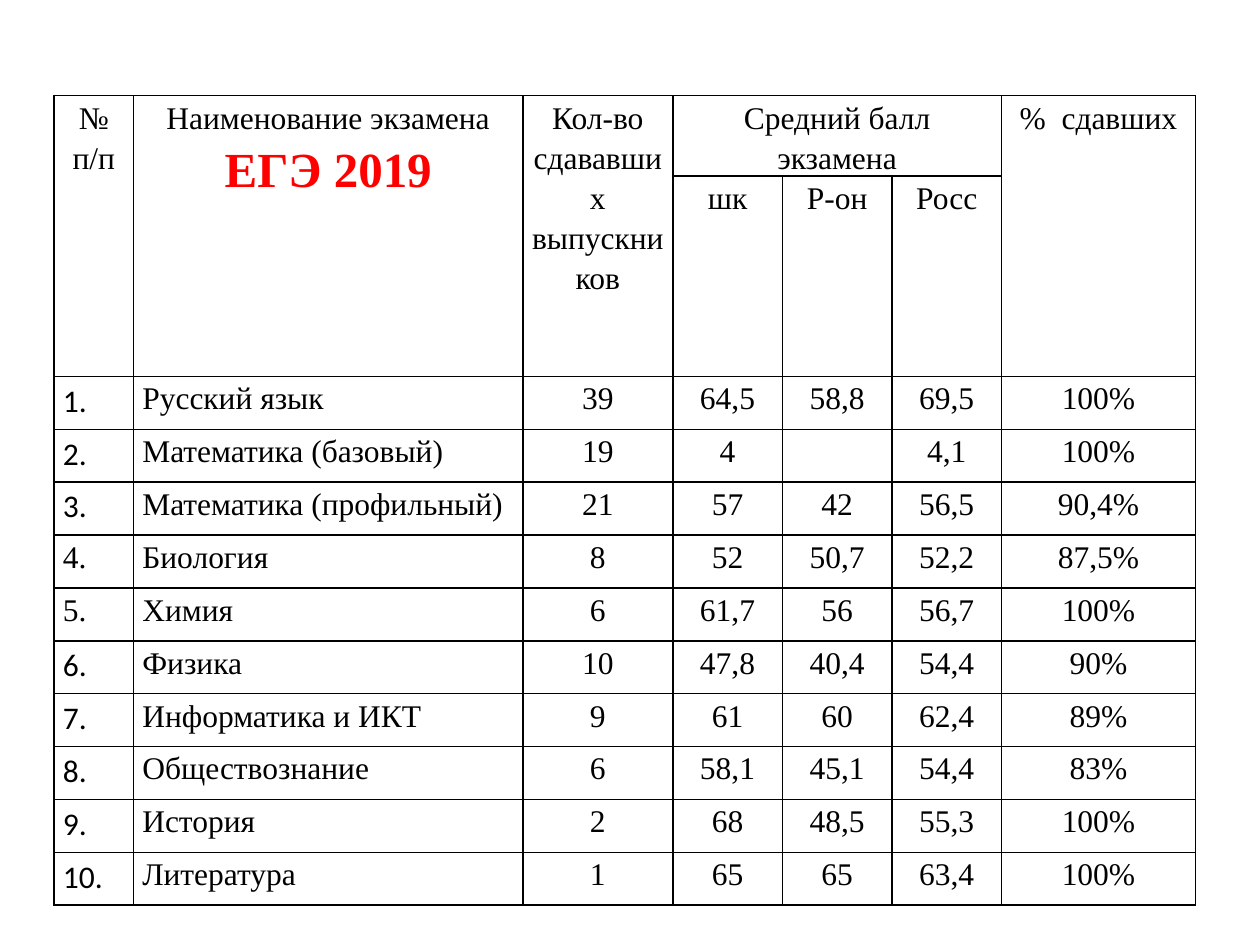
from dataclasses import dataclass

from lxml import etree
from pptx import Presentation
from pptx import util as u
from pptx.dml.color import RGBColor
from pptx.enum import text
from pptx.oxml import ns


@dataclass(frozen=True)
class Theme:
    ink: str = "000000"
    accent: str = "FF0000"
    font: str = "Times New Roman"
    number_font: str = "Calibri"
    body: int = 18
    title: int = 28
    border: int = 1
    leading: float = 1.15


theme = Theme()
COLUMNS = [0.63, 3.09, 1.19, 0.87, 0.87, 0.87, 1.54]
HEADER_ROWS = [0.52, 1.15]
EXAM_ROW = 0.42
NUMBER_INDENT = u.Inches(0.38)
TIMES_NUMBERS = ("4.", "5.")

# (row, column, rows spanned, columns spanned, text)
headings = [
    (0, 0, 2, 1, "№ п/п"),
    (0, 1, 2, 1, "Наименование экзамена\nЕГЭ 2019"),
    (0, 2, 2, 1, "Кол-во\nсдававших выпускников"),
    (0, 3, 1, 3, "Средний балл экзамена"),
    (0, 6, 2, 1, "%  сдавших"),
    (1, 3, 1, 1, "шк"),
    (1, 4, 1, 1, "Р-он"),
    (1, 5, 1, 1, "Росс"),
]
exams = [
    ("Русский язык", "39", "64,5", "58,8", "69,5", "100%"),
    ("Математика (базовый)", "19", "4", "", "4,1", "100%"),
    ("Математика (профильный)", "21", "57", "42", "56,5", "90,4%"),
    ("Биология", "8", "52", "50,7", "52,2", "87,5%"),
    ("Химия", "6", "61,7", "56", "56,7", "100%"),
    ("Физика", "10", "47,8", "40,4", "54,4", "90%"),
    ("Информатика и ИКТ", "9", "61", "60", "62,4", "89%"),
    ("Обществознание", "6", "58,1", "45,1", "54,4", "83%"),
    ("История", "2", "68", "48,5", "55,3", "100%"),
    ("Литература", "1", "65", "65", "63,4", "100%"),
]


def write(cell, words, align=text.PP_ALIGN.CENTER, font=theme.font):
    cell.text_frame.text = words
    for para in cell.text_frame.paragraphs:
        para.alignment = align
        para.line_spacing = theme.leading
        para.font.size = u.Pt(theme.body)
        for span in para.runs:
            span.font.name = font
            span.font.size = u.Pt(theme.body)
            span.font.bold = False
            span.font.color.rgb = RGBColor.from_string(theme.ink)


def draw_borders(cell):
    properties = cell._tc.get_or_add_tcPr()
    for side in ("a:lnL", "a:lnR", "a:lnT", "a:lnB"):
        line = etree.SubElement(properties, ns.qn(side), w=str(u.Pt(theme.border)))
        fill = etree.SubElement(line, ns.qn("a:solidFill"))
        etree.SubElement(fill, ns.qn("a:srgbClr"), val=theme.ink)


deck = Presentation()
deck.slide_width, deck.slide_height = u.Inches(10), u.Inches(7.5)
page = deck.slides.add_slide(deck.slide_layouts[6])

rows = HEADER_ROWS + [EXAM_ROW] * len(exams)
table = page.shapes.add_table(
    len(rows), len(COLUMNS), u.Inches(0.43), u.Inches(0.76),
    u.Inches(sum(COLUMNS)), u.Inches(sum(rows)),
).table
table.first_row = table.horz_banding = False
for column, width in zip(table.columns, COLUMNS):
    column.width = u.Inches(width)
for row, height in zip(table.rows, rows):
    row.height = u.Inches(height)

for cell in table.iter_cells():
    cell.margin_left = cell.margin_right = u.Inches(0.07)
    cell.margin_top = cell.margin_bottom = 0
    draw_borders(cell)
    cell.fill.background()

for top, left, height, width, words in headings:
    cell = table.cell(top, left)
    if height * width > 1:
        cell.merge(table.cell(top + height - 1, left + width - 1))
    write(cell, words)

exam_year = table.cell(0, 1).text_frame.paragraphs[1].runs[0]
exam_year.font.size = u.Pt(theme.title)
exam_year.font.bold = True
exam_year.font.color.rgb = RGBColor.from_string(theme.accent)

for index, (subject, *results) in enumerate(exams):
    row = len(HEADER_ROWS) + index
    number = f"{index + 1}."
    number_cell = table.cell(row, 0)
    font = theme.font if number in TIMES_NUMBERS else theme.number_font
    write(number_cell, number, text.PP_ALIGN.LEFT, font)
    indent = number_cell.text_frame.paragraphs[0]._p.get_or_add_pPr()
    indent.set("marL", str(NUMBER_INDENT))
    indent.set("indent", str(-NUMBER_INDENT))
    write(table.cell(row, 1), subject, text.PP_ALIGN.LEFT)
    for column, result in enumerate(results, start=2):
        write(table.cell(row, column), result)

deck.save("out.pptx")
